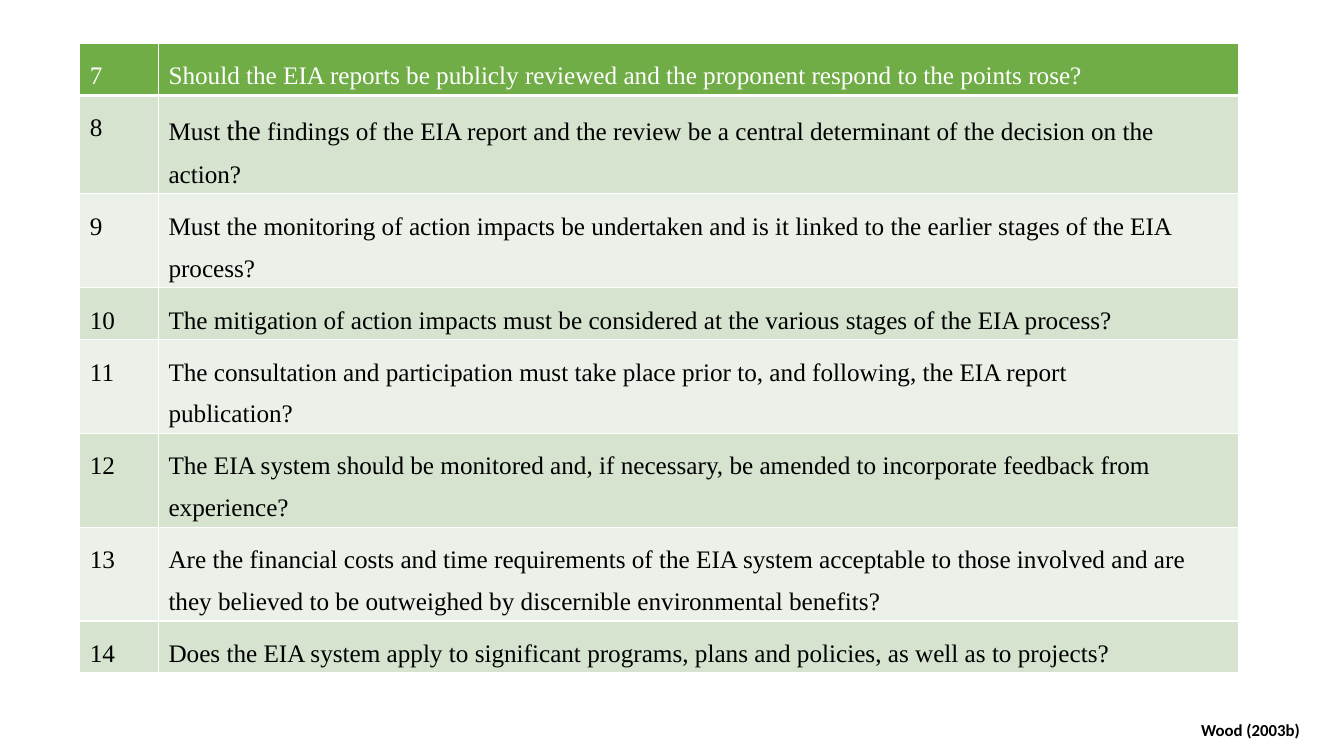
from pptx import Presentation
from pptx.dml.color import RGBColor
from pptx.enum.text import MSO_ANCHOR, PP_ALIGN
from pptx.oxml import parse_xml
from pptx.oxml.ns import nsdecls
from pptx.util import Pt

WHITE = RGBColor(0xFF, 0xFF, 0xFF)
BLACK = RGBColor(0, 0, 0)
GREEN = RGBColor(0x70, 0xAD, 0x47)
SAGE = RGBColor(0xD5, 0xE3, 0xCF)
MIST = RGBColor(0xEB, 0xF1, 0xE9)

FIRST = 7  # number of the first question
NUM_WIDTH = 56.16
ROW = 29.52

# Each question is a list of lines; each line is a list of (text, size) runs
ITEMS = [
    [[("Should the EIA reports be publicly reviewed and the proponent respond to the points rose?", 18)]],
    [[("Must ", 18), ("the", 20),
      (" findings of the EIA report and the review be a central determinant of the decision on the", 18)],
     [("action?", 18)]],
    [[("Must the monitoring of action impacts be undertaken and is it linked to the earlier stages of the EIA", 18)],
     [("process?", 18)]],
    [[("The mitigation of action impacts must be considered at the various stages of the EIA process?", 18)]],
    [[("The consultation and participation must take place prior to, and following, the EIA report", 18)],
     [("publication?", 18)]],
    [[("The EIA system should be monitored and, if necessary, be amended to incorporate feedback from", 18)],
     [("experience?", 18)]],
    [[("Are the financial costs and time requirements of the EIA system acceptable to those involved and are", 18)],
     [("they believed to be outweighed by discernible environmental benefits?", 18)]],
    [[("Does the EIA system apply to significant programs, plans and policies, as well as to projects?", 18)]],
]


def add_run(para, text, size, face, color, bold=False):
    run = para.add_run()
    run.text = text
    font = run.font
    font.size, font.name, font.bold = Pt(size), face, bold
    font.color.rgb = color


def set_edges(cell, top, base):
    """Draw white cell borders, with the top and bottom widths in points."""
    props = cell._tc.get_or_add_tcPr()
    edges = [("L", 1), ("R", 1), ("T", top), ("B", base)]
    for spot, (side, width) in enumerate(edges):
        line = parse_xml(
            f'<a:ln{side} {nsdecls("a")} w="{Pt(width)}"><a:solidFill>'
            f'<a:srgbClr val="{WHITE}"/></a:solidFill></a:ln{side}>')
        props.insert(spot, line)


def fill_cell(cell, lines, color, fill):
    cell.fill.solid()
    cell.fill.fore_color.rgb = fill
    frame = cell.text_frame
    for i, line in enumerate(lines):
        para = frame.add_paragraph() if i else frame.paragraphs[0]
        para.alignment = PP_ALIGN.JUSTIFY
        para.line_spacing = 1.5
        for text, size in line:
            add_run(para, text, size, "Times New Roman", color)


def add_grid(slide, left, top, width):
    """Numbered questions; rows grow to fit their text."""
    count = len(ITEMS)
    table = slide.shapes.add_table(
        count, 2, Pt(left), Pt(top), Pt(width), Pt(ROW * count)).table
    table.columns[0].width = Pt(NUM_WIDTH)
    table.columns[1].width = Pt(width - NUM_WIDTH)
    for i, lines in enumerate(ITEMS):
        fill = GREEN if i == 0 else SAGE if i % 2 else MIST
        color = BLACK if i else WHITE
        number = [[(str(FIRST + i), 18)]]
        for cell, body in zip(table.rows[i].cells, (number, lines)):
            fill_cell(cell, body, color, fill)
            set_edges(cell, 3 if i == 1 else 1, 3 if i == 0 else 1)


def add_credit(slide, left, top, width, height):
    """Citation in the bottom corner."""
    box = slide.shapes.add_textbox(Pt(left), Pt(top), Pt(width), Pt(height))
    frame = box.text_frame
    frame.word_wrap = True
    frame.vertical_anchor = MSO_ANCHOR.MIDDLE
    para = frame.paragraphs[0]
    para.alignment = PP_ALIGN.CENTER
    add_run(para, "Wood (2003b)", 12, "Calibri", BLACK, True)


def main():
    deck = Presentation()
    deck.slide_width, deck.slide_height = Pt(960), Pt(540)
    slide = deck.slides.add_slide(deck.slide_layouts[6])
    add_grid(slide, 57, 31, 828)
    add_credit(slide, 826.6, 506.9, 133.2, 28.8)
    deck.save("out.pptx")


if __name__ == "__main__":
    main()
